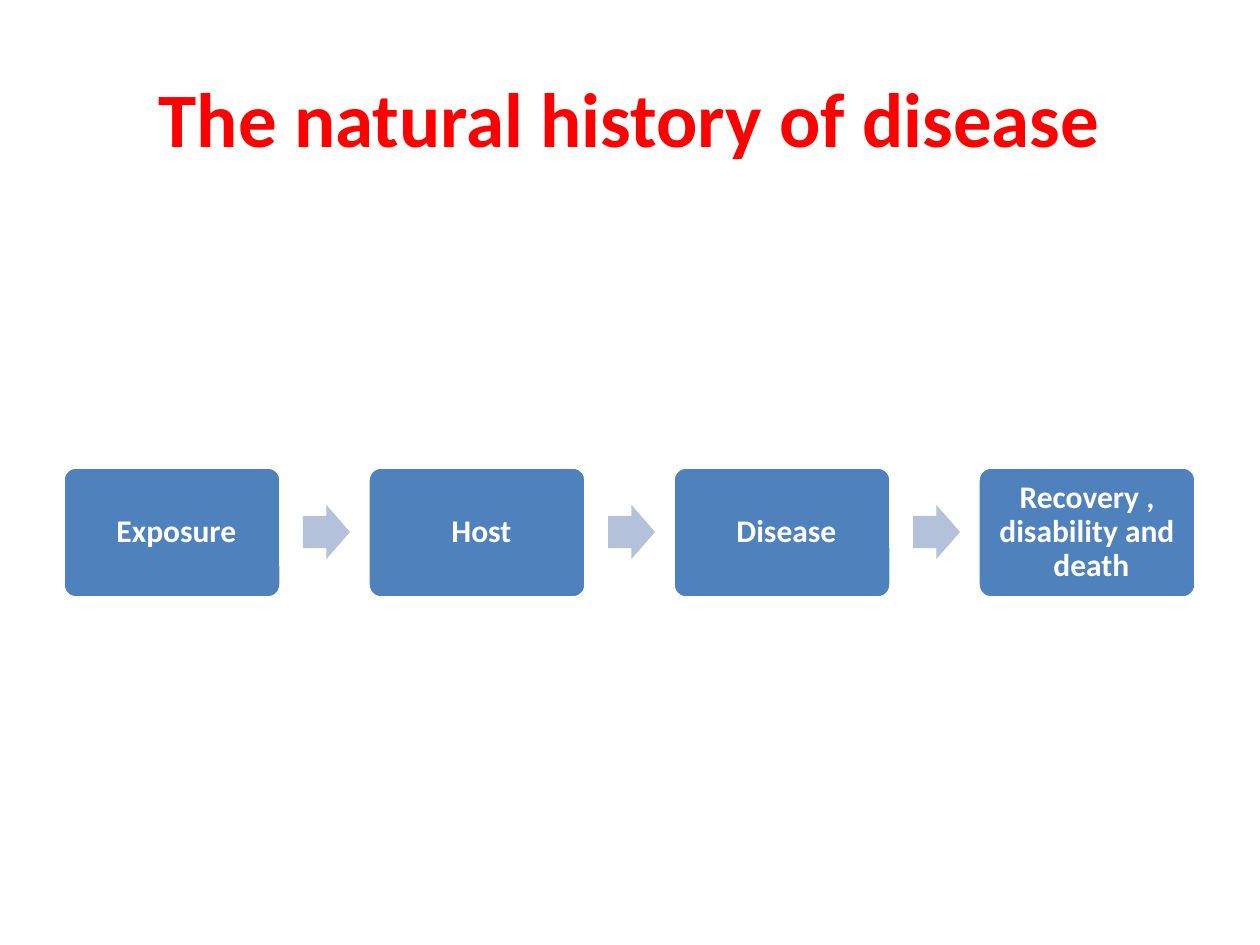
"""Build the slide on the natural history of disease as a four-step flow."""
import pptx
import pptx.dml.color
import pptx.enum.shapes
import pptx.enum.text
import pptx.util

THEME = {
    "font": "Calibri",
    "title": "FF0000",
    "box": "4F81BD",
    "arrow": "B3C1DB",
    "white": "FFFFFF",
    "title_size": 44,
    "step_size": 18,
}
SCALE = 914400 / 126
SHAPE = pptx.enum.shapes.MSO_SHAPE


def px(*values):
    return [pptx.util.Emu(round(v * SCALE)) for v in values]


def write(sp, text, size, color, inset, spacing=1.0, rtl=False):
    tf = sp.text_frame
    tf.word_wrap = True
    tf.vertical_anchor = pptx.enum.text.MSO_ANCHOR.MIDDLE
    tf.margin_left = tf.margin_right = tf.margin_top = tf.margin_bottom = px(inset)[0]
    p = tf.paragraphs[0]
    p.alignment = pptx.enum.text.PP_ALIGN.CENTER
    p.line_spacing = spacing
    if rtl:
        p._p.get_or_add_pPr().set("rtl", "1")
    r = p.add_run()
    r.text = text
    r.font.name = THEME["font"]
    r.font.size = pptx.util.Pt(size)
    r.font.bold = True
    r.font.color.rgb = pptx.dml.color.RGBColor.from_string(color)


prs = pptx.Presentation()
prs.slide_width, prs.slide_height = px(1260, 945)
s = prs.slides.add_slide(prs.slide_layouts[6])

title = s.shapes.add_textbox(*px(63, 38, 1134, 157))
write(title, "The natural history of disease", THEME["title_size"], THEME["title"], inset=9)

steps = ["Exposure ", "Host ", "Disease ", "Recovery , disability and death "]
left, pitch = 63, 305

for i, step in enumerate(steps):
    x = left + i * pitch
    box = s.shapes.add_shape(SHAPE.ROUNDED_RECTANGLE, *px(x, 467, 218, 131))
    box.adjustments[0] = 0.1
    box.shadow.inherit = False
    box.fill.solid()
    box.fill.fore_color.rgb = pptx.dml.color.RGBColor.from_string(THEME["box"])
    box.line.color.rgb = pptx.dml.color.RGBColor.from_string(THEME["white"])
    box.line.width = pptx.util.Pt(2)
    write(box, step, THEME["step_size"], THEME["white"], inset=9, spacing=0.9, rtl=True)

    if i < len(steps) - 1:
        arrow = s.shapes.add_shape(SHAPE.RIGHT_ARROW, *px(x + 240, 505, 47, 54))
        arrow.adjustments[0] = 0.6
        arrow.adjustments[1] = 0.5
        arrow.shadow.inherit = False
        arrow.fill.solid()
        arrow.fill.fore_color.rgb = pptx.dml.color.RGBColor.from_string(THEME["arrow"])
        arrow.line.fill.background()

prs.save("out.pptx")
